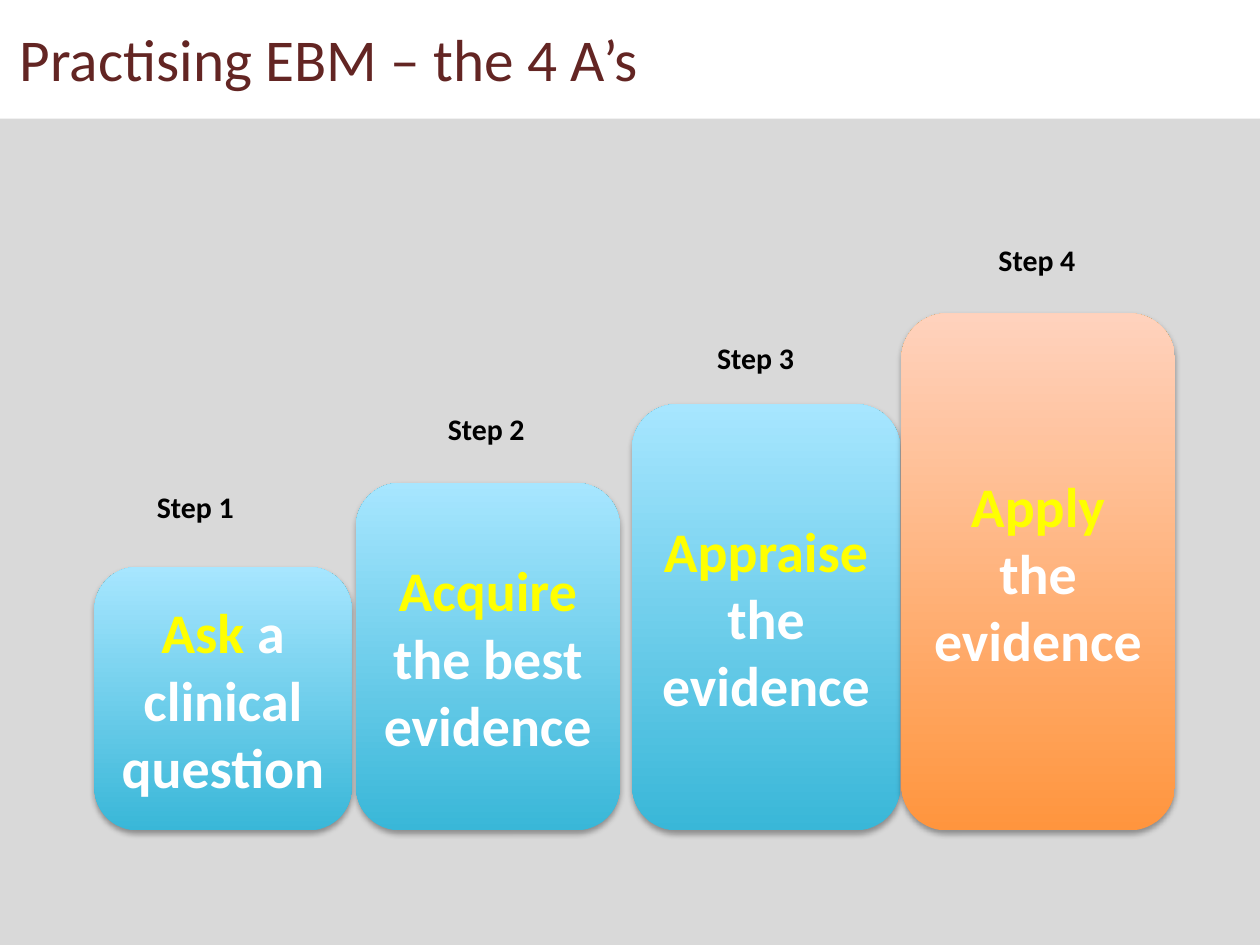
from dataclasses import dataclass

from lxml.etree import SubElement
from pptx import Presentation
from pptx.dml.color import RGBColor
from pptx.enum.shapes import MSO_SHAPE
from pptx.enum.text import MSO_ANCHOR, PP_ALIGN
from pptx.oxml.ns import qn
from pptx.util import Cm, Pt

COLORS = {
    "panel": "D9D9D9",
    "title": "632523",
    "label": "000000",
    "key": "FFFF00",
    "text": "FFFFFF",
    "shadow": "000000",
    "blue_low": "39B7D8",
    "blue_high": "A7E6FF",
    "orange_low": "FF953E",
    "orange_high": "FFD2BD",
}
FONT = "Calibri"
WIDTH, HEIGHT = 24, 18
PANEL_TOP = 2.26
BASELINE = 15.82


@dataclass
class Step:
    key: str
    rest: str
    left: float
    top: float
    width: float
    label_left: float
    label_top: float
    tone: str = "blue"


STEPS = [
    Step("Ask", " a clinical question", 1.8, 10.8, 4.9, 2.74, 9.19),
    Step("Acquire", " the best evidence", 6.78, 9.2, 5.03, 8.28, 7.7),
    Step("Appraise", " the evidence", 12.04, 7.7, 5.11, 13.41, 6.35),
    Step("Apply", " the evidence", 17.17, 5.97, 5.21, 18.77, 4.47, "orange"),
]


def rgb(name: str) -> RGBColor:
    return RGBColor.from_string(COLORS[name])


def add_shadow(sp) -> None:
    effects = SubElement(sp._element.spPr, qn("a:effectLst"))
    shadow = SubElement(effects, qn("a:outerShdw"), blurRad=str(Pt(3.1)),
                        dist=str(Pt(1.8)), dir="5400000", rotWithShape="0")
    color = SubElement(shadow, qn("a:srgbClr"), val=COLORS["shadow"])
    SubElement(color, qn("a:alpha"), val="35000")


def add_text(s, text: str, left: float, top: float, width: float, height: float,
             size: float, color: str, bold: bool = False) -> None:
    sp = s.shapes.add_textbox(Cm(left), Cm(top), Cm(width), Cm(height))
    p = sp.text_frame.paragraphs[0]
    p.text = text
    p.font.name, p.font.size, p.font.bold = FONT, Pt(size), bold
    p.font.color.rgb = rgb(color)


def add_block(s, step: Step) -> None:
    sp = s.shapes.add_shape(MSO_SHAPE.ROUNDED_RECTANGLE, Cm(step.left), Cm(step.top),
                            Cm(step.width), Cm(BASELINE - step.top))
    sp.line.fill.background()
    sp.fill.gradient()
    sp.fill.gradient_angle = 90
    for stop, end in zip(sp.fill.gradient_stops, ("low", "high")):
        stop.color.rgb = rgb(f"{step.tone}_{end}")
    add_shadow(sp)

    tf = sp.text_frame
    tf.word_wrap = True
    tf.vertical_anchor = MSO_ANCHOR.MIDDLE
    p = tf.paragraphs[0]
    p.alignment = PP_ALIGN.CENTER
    p.font.name, p.font.size, p.font.bold = FONT, Pt(30.2), True
    for text, color in ((step.key, "key"), (step.rest, "text")):
        r = p.add_run()
        r.text = text
        r.font.color.rgb = rgb(color)


def main() -> None:
    prs = Presentation()
    prs.slide_width, prs.slide_height = Cm(WIDTH), Cm(HEIGHT)
    s = prs.slides.add_slide(prs.slide_layouts[6])

    # Grey panel
    panel = s.shapes.add_shape(MSO_SHAPE.RECTANGLE, 0, Cm(PANEL_TOP),
                               Cm(WIDTH), Cm(HEIGHT - PANEL_TOP))
    panel.shadow.inherit = False
    panel.fill.solid()
    panel.fill.fore_color.rgb = rgb("panel")
    panel.line.fill.background()

    # Staircase of blocks
    for step in STEPS:
        add_block(s, step)

    # Step labels
    for number, step in enumerate(STEPS, 1):
        add_text(s, f"Step {number}", step.label_left, step.label_top, 1.98, 0.94,
                 16.1, "label", bold=True)

    # Title
    add_text(s, "Practising EBM – the 4 A’s", 0.13, 0.3, 12.85, 1.88, 32, "title")

    prs.save("out.pptx")


if __name__ == "__main__":
    main()
